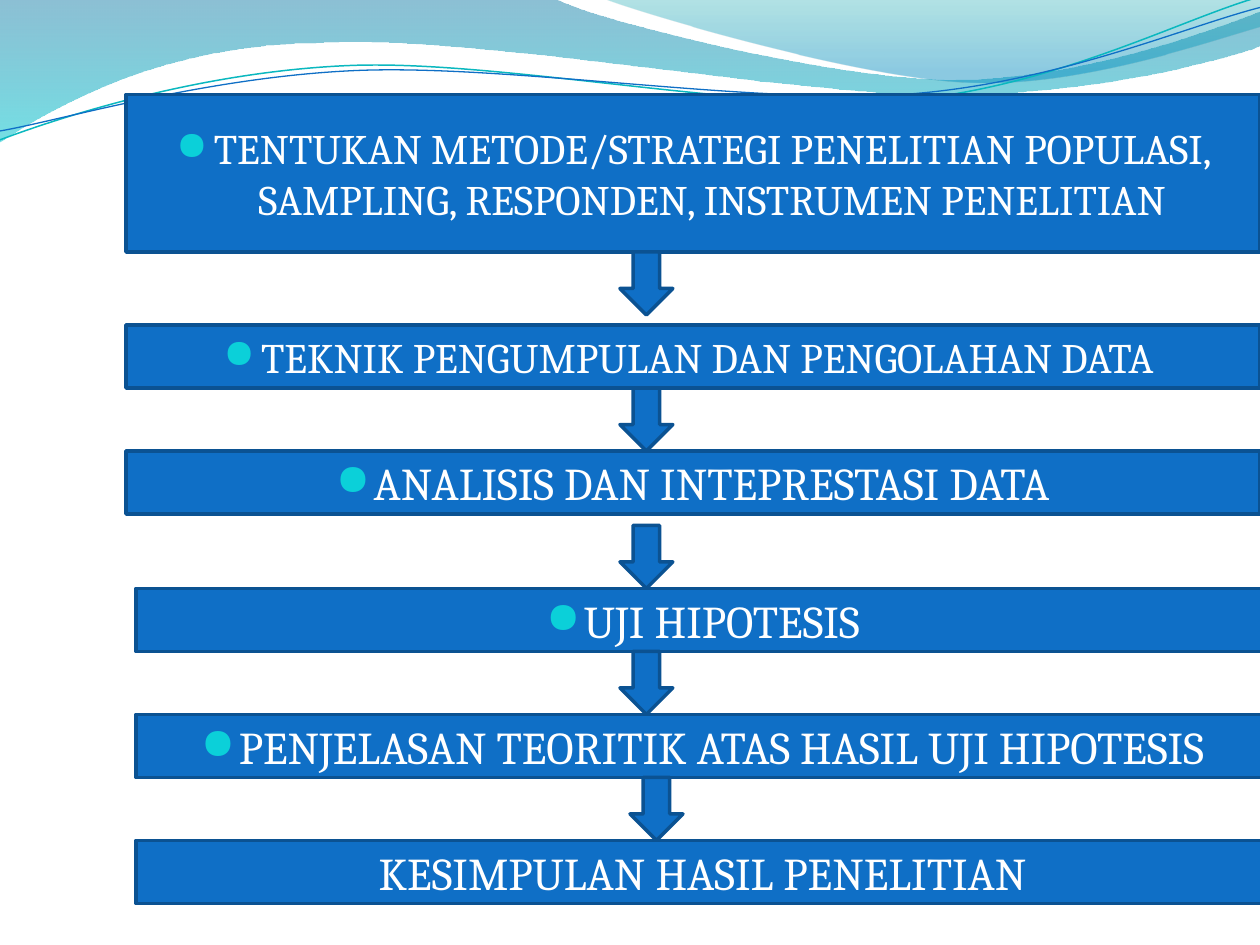
"""Build a research-procedure flow slide with a wave header."""
from dataclasses import dataclass
from math import cos, radians, sin
from typing import Optional

from lxml.etree import SubElement
from pptx import Presentation
from pptx.dml.color import RGBColor
from pptx.enum.shapes import MSO_SHAPE as Preset
from pptx.enum.text import MSO_ANCHOR as Anchor, PP_ALIGN as Align
from pptx.oxml.ns import qn
from pptx.util import Inches, Pt

BLUE, DARK_BLUE, CYAN, WHITE = "0F6FC6", "0B5292", "0BD0D9", "FFFFFF"
LINE_TILT = -2.7
FRAME_FORMAT = {"word_wrap": True, "vertical_anchor": Anchor.MIDDLE}
FONT_FORMAT = {"name": "Cambria", "bold": False}


@dataclass
class Stop:
    position: float
    color: str
    opacity: int


@dataclass
class Wave:
    start: tuple
    segments: list
    stops: Optional[list] = None
    line: Optional[tuple] = None
    center: tuple = (0, 0)
    tilt: float = 0


@dataclass
class Step:
    text: str
    left: float
    top: float
    height: float = 0.5
    size: float = 26
    bullet: bool = True


@dataclass
class Arrow:
    left: float
    top: float


WAVES = [
    Wave((0, -0.01), [
        (4.4, -0.01),
        (4.76, 0.17, 6.64, 0.63, 7.58, 0.63),
        (8.53, 0.63, 9.58, 0.26, 10, 0.09),
        (10.01, 0.36),
        (9.83, 0.44, 8.7, 0.76, 7.46, 0.75),
        (6.22, 0.75, 3.82, 0.28, 2.57, 0.34),
        (1.29, 0.35, 0.46, 0.83, -0.01, 1.13),
        (0, -0.01),
    ], stops=[Stop(0, "0074A1", 45), Stop(1, "00C6CF", 55)]),
    Wave((4.79, -0.01), [
        (5.09, 0.11, 6.82, 0.62, 7.69, 0.65),
        (8.56, 0.69, 9.61, 0.32, 10, 0.21),
        (10, 0),
        (4.79, -0.01),
    ], stops=[Stop(0, "00A1A9", 30), Stop(0.8, "008BBF", 45)]),
    Wave((0, 1.11), [
        (0.48, 0.93, 1.58, 0.57, 2.77, 0.52),
        (3.95, 0.47, 5.93, 0.89, 7.13, 0.8),
        (8.33, 0.71, 9.38, 0.15, 9.98, -0.02),
    ], line=("0AB8BF", 0.85), center=(4.99, 0.57), tilt=LINE_TILT),
    Wave((0, 1.04), [
        (0.47, 0.96, 1.64, 0.61, 2.83, 0.56),
        (4.03, 0.51, 5.97, 0.83, 7.17, 0.75),
        (8.36, 0.67, 9.41, 0.21, 10, 0.06),
    ], line=(BLUE, 0.75), center=(5, 0.59), tilt=LINE_TILT),
]
STEPS = [
    Step("TENTUKAN METODE/STRATEGI PENELITIAN POPULASI, SAMPLING, RESPONDEN, "
         "INSTRUMEN PENELITIAN", 1, 0.75, height=1.25, size=24),
    Step("TEKNIK PENGUMPULAN DAN PENGOLAHAN DATA ", 1, 2.58, size=24),
    Step("ANALISIS DAN INTEPRESTASI DATA", 1, 3.58),
    Step("UJI HIPOTESIS", 1.08, 4.67),
    Step("PENJELASAN TEORITIK ATAS HASIL UJI HIPOTESIS", 1.08, 5.67),
    Step("KESIMPULAN HASIL PENELITIAN", 1.08, 6.67, bullet=False),
]
ARROWS = [Arrow(4.92, 2), Arrow(4.92, 3.08), Arrow(4.92, 4.17),
          Arrow(4.92, 5.17), Arrow(5, 6.17)]


def rgb(color: str) -> RGBColor:
    """Turn a hex string into a colour."""
    return RGBColor.from_string(color)


def apply_format(target, values: dict) -> None:
    """Set each named attribute on the target."""
    for name, value in values.items():
        setattr(target, name, value)


def set_line(shape, color: str, width: float) -> None:
    """Give the shape a solid outline."""
    shape.line.color.rgb = rgb(color)
    shape.line.width = Pt(width)


def level_points(wave: Wave) -> list:
    """List the wave's points in slide units with its tilt taken out."""
    numbers = [*wave.start, *(value for segment in wave.segments for value in segment)]
    angle = radians(-wave.tilt)
    center_x, center_y = wave.center
    points = []
    for x, y in zip(numbers[::2], numbers[1::2]):
        across, down = x - center_x, y - center_y
        points.append((
            Inches(center_x + across * cos(angle) - down * sin(angle)),
            Inches(center_y + across * sin(angle) + down * cos(angle))))
    return points


def bend_segments(shape, segments: list) -> None:
    """Join each three lines of a cubic segment into one curve."""
    outline = next(shape.element.iter(qn("a:path")))
    lines = iter(outline.findall(qn("a:lnTo")))
    for segment in segments:
        first = next(lines)
        if len(segment) == 2:
            continue
        first.tag = qn("a:cubicBezTo")
        for line in (next(lines), next(lines)):
            first.append(line[0])
            outline.remove(line)


def fill_gradient(shape, stops: list) -> None:
    """Fill the shape downwards with translucent gradient stops."""
    shape.fill.gradient()
    shape.fill.gradient_angle = 270
    for target, stop in zip(shape.fill.gradient_stops, stops):
        target.position = stop.position
        target.color.rgb = rgb(stop.color)
    colors = shape.element.spPr.iter(qn("a:srgbClr"))
    for element, stop in zip(colors, stops):
        SubElement(element, qn("a:alpha"), val=str(stop.opacity * 1000))


def draw_wave(slide, wave: Wave) -> None:
    """Draw a filled wave or a thin wave line."""
    start, *points = level_points(wave)
    builder = slide.shapes.build_freeform(*start)
    builder.add_line_segments(points, close=wave.line is None)
    shape = builder.convert_to_shape()
    bend_segments(shape, wave.segments)
    shape.rotation = wave.tilt
    shape.shadow.inherit = False
    if wave.line:
        shape.fill.background()
        set_line(shape, *wave.line)
    else:
        shape.line.fill.background()
        fill_gradient(shape, wave.stops)


def add_block(slide, preset, left: float, top: float, width: float, height: float):
    """Add a blue preset shape with a dark outline."""
    shape = slide.shapes.add_shape(
        preset, Inches(left), Inches(top), Inches(width), Inches(height))
    shape.shadow.inherit = False
    shape.fill.solid()
    shape.fill.fore_color.rgb = rgb(BLUE)
    set_line(shape, DARK_BLUE, 2)
    return shape


def set_bullet(paragraph, visible: bool) -> None:
    """Set the hanging indent, space before and bullet."""
    properties = paragraph._p.get_or_add_pPr()
    properties.set("marL", str(Inches(0.3)))
    properties.set("indent", str(Inches(-0.3)))
    spacing = SubElement(properties, qn("a:spcBef"))
    SubElement(spacing, qn("a:spcPct"), val="20000")
    if not visible:
        SubElement(properties, qn("a:buNone"))
        return
    color = SubElement(properties, qn("a:buClr"))
    SubElement(color, qn("a:srgbClr"), val=CYAN)
    SubElement(properties, qn("a:buSzPct"), val="95000")
    SubElement(properties, qn("a:buFont"), typeface="OpenSymbol")
    SubElement(properties, qn("a:buChar"), char="●")


def draw_step(slide, step: Step) -> None:
    """Draw one step box with its text."""
    shape = add_block(slide, Preset.FLOWCHART_PROCESS,
                      step.left, step.top, 9, step.height)
    apply_format(shape.text_frame, FRAME_FORMAT)
    paragraph = shape.text_frame.paragraphs[0]
    paragraph.alignment = Align.CENTER
    set_bullet(paragraph, step.bullet)
    run = paragraph.add_run()
    run.text = step.text
    apply_format(run.font, {**FONT_FORMAT, "size": Pt(step.size)})
    run.font.color.rgb = rgb(WHITE)


def main() -> None:
    """Build and save the slide."""
    presentation = Presentation()
    apply_format(presentation, {"slide_width": Inches(10), "slide_height": Inches(7.5)})
    slide = presentation.slides.add_slide(presentation.slide_layouts[6])
    for wave in WAVES:
        draw_wave(slide, wave)
    for step in STEPS:
        draw_step(slide, step)
    for arrow in ARROWS:
        add_block(slide, Preset.DOWN_ARROW, arrow.left, arrow.top, 0.42, 0.5)
    presentation.save("out.pptx")


if __name__ == "__main__":
    main()
